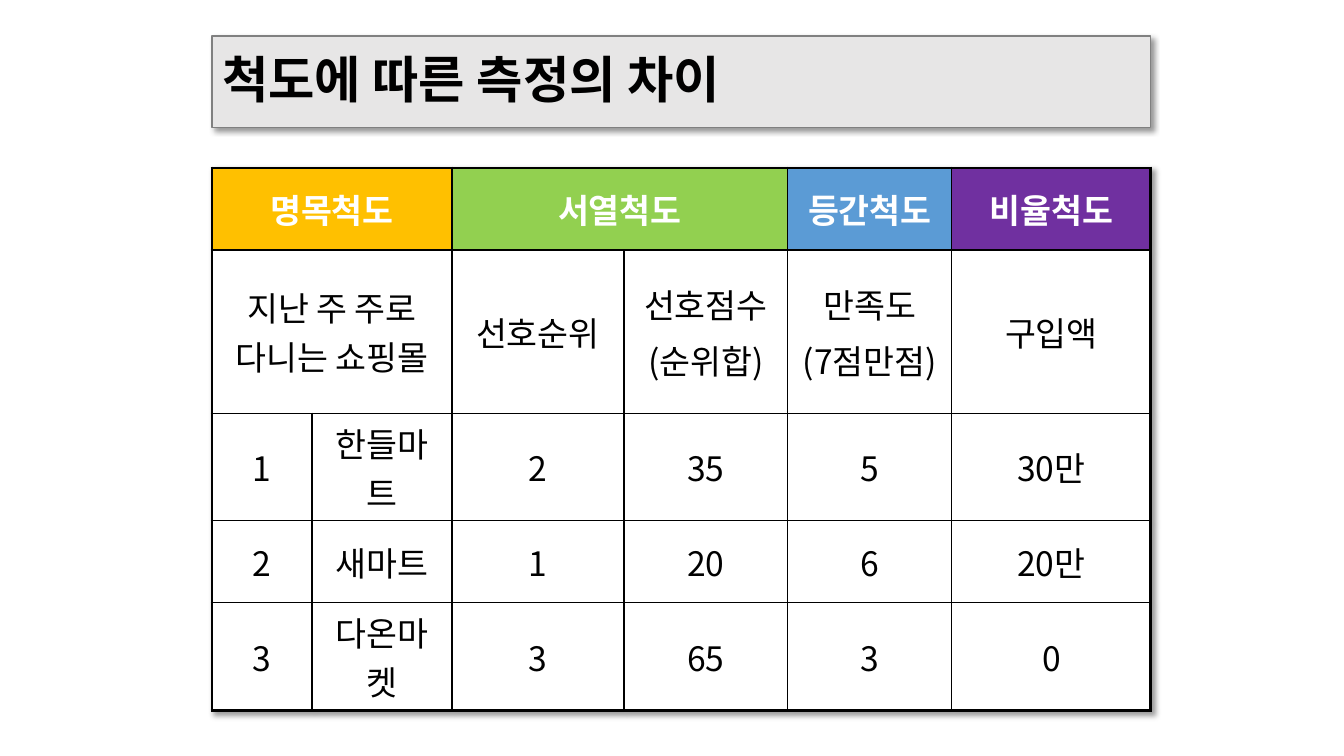
from lxml import etree
from pptx import Presentation
from pptx.dml.color import RGBColor
from pptx.enum import text
from pptx.oxml import parse_xml
from pptx.oxml.ns import nsdecls, qn
from pptx.util import Pt

SLIDE_WIDTH, SLIDE_HEIGHT = 1344, 756
EMU_PER_PX = 12192000 / SLIDE_WIDTH
KOREAN_FONT = "Noto Sans CJK KR"

COLUMN_WIDTHS = [100, 140, 172, 164, 164, 199]
ROW_HEIGHTS = [82, 99, 82, 82, 82]
HEADER_FILLS = ["FFC000", "FFC000", "92D050", "92D050", "5B9BD5", "7030A0"]
MERGES = [(0, 0, 1), (0, 2, 3), (1, 0, 1)]  # row, first column, last column
ROWS = [
    ["명목척도", "", "서열척도", "", "등간척도", "비율척도"],
    ["지난 주 주로 다니는 쇼핑몰", "", "선호순위", "선호점수\n(순위합)",
     "만족도\n(7점만점)", "구입액"],
    ["1", "한들마트", "2", "35", "5", "30만"],
    ["2", "새마트", "1", "20", "6", "20만"],
    ["3", "다온마켓", "3", "65", "3", "0"],
]


def px(length):
    return round(length * EMU_PER_PX)


def color(value):
    return RGBColor.from_string(value)


def write(frame, content, size, font=KOREAN_FONT, fill="000000", bold=False,
          align=text.PP_ALIGN.LEFT, before=0, spacing=1.0):
    """Write one paragraph per line of content."""
    frame.text = content
    for paragraph in frame.paragraphs:
        paragraph.alignment = align
        paragraph.space_before = Pt(before)
        paragraph.line_spacing = spacing
        for run in paragraph.runs:
            run.font.size = Pt(size)
            run.font.bold = bold
            run.font.color.rgb = color(fill)
            run.font.name = font
            east_asian = etree.SubElement(run.font._element, qn("a:ea"))
            east_asian.set("typeface", KOREAN_FONT)


def shadow():
    return parse_xml(
        f'<a:effectLst {nsdecls("a")}><a:outerShdw blurRad="{Pt(4)}" dist="{Pt(3)}" '
        'dir="2700000" algn="tl" rotWithShape="0"><a:srgbClr val="000000">'
        '<a:alpha val="40000"/></a:srgbClr></a:outerShdw></a:effectLst>')


def set_borders(cell, widths):
    """Widths are points for the left, right, top and bottom sides."""
    properties = cell._tc.get_or_add_tcPr()
    for index, (side, width) in enumerate(zip("LRTB", widths)):
        properties.insert(index, parse_xml(
            f'<a:ln{side} {nsdecls("a")} w="{Pt(width)}"><a:solidFill>'
            f'<a:srgbClr val="000000"/></a:solidFill></a:ln{side}>'))


def add_title(slide, left, top, width, height):
    title = slide.shapes.title
    title.left, title.top = px(left), px(top)
    title.width, title.height = px(width), px(height)
    title.fill.solid()
    title.fill.fore_color.rgb = color("E7E6E6")
    title.line.color.rgb = color("808080")
    title.line.width = Pt(0.75)
    title._element.spPr.append(shadow())
    frame = title.text_frame
    frame.vertical_anchor = text.MSO_ANCHOR.MIDDLE
    frame.auto_size = text.MSO_AUTO_SIZE.NONE
    write(frame, "척도에 따른 측정의 차이", 36, font="Calibri", bold=True, spacing=0.9)


def add_scale_table(slide, left, top):
    last_row, last_column = len(ROWS) - 1, len(COLUMN_WIDTHS) - 1
    table = slide.shapes.add_table(
        len(ROWS), len(COLUMN_WIDTHS), px(left), px(top),
        px(sum(COLUMN_WIDTHS)), px(sum(ROW_HEIGHTS))).table
    table._tbl.tblPr.insert(0, shadow())
    for column, width in zip(table.columns, COLUMN_WIDTHS):
        column.width = px(width)
    for row, height in zip(table.rows, ROW_HEIGHTS):
        row.height = px(height)

    # Cells: coloured header, white body, heavy outer frame
    for r, values in enumerate(ROWS):
        for c, value in enumerate(values):
            cell = table.cell(r, c)
            header = r == 0
            write(cell.text_frame, value, 24, bold=header, before=5,
                  fill="FFFFFF" if header else "000000", align=text.PP_ALIGN.CENTER)
            cell.vertical_anchor = text.MSO_ANCHOR.MIDDLE
            cell.fill.solid()
            cell.fill.fore_color.rgb = color(HEADER_FILLS[c] if header else "FFFFFF")
            outer = (c == 0, c == last_column, header, r == last_row)
            set_borders(cell, [2.25 if edge else 1 for edge in outer])
    for row, first, last in MERGES:
        table.cell(row, first).merge(table.cell(row, last))


def main():
    presentation = Presentation()
    presentation.slide_width = px(SLIDE_WIDTH)
    presentation.slide_height = px(SLIDE_HEIGHT)
    slide = presentation.slides.add_slide(presentation.slide_layouts[5])
    add_title(slide, 212, 36, 939, 92)
    add_scale_table(slide, 212, 168)
    presentation.save("out.pptx")


if __name__ == "__main__":
    main()
